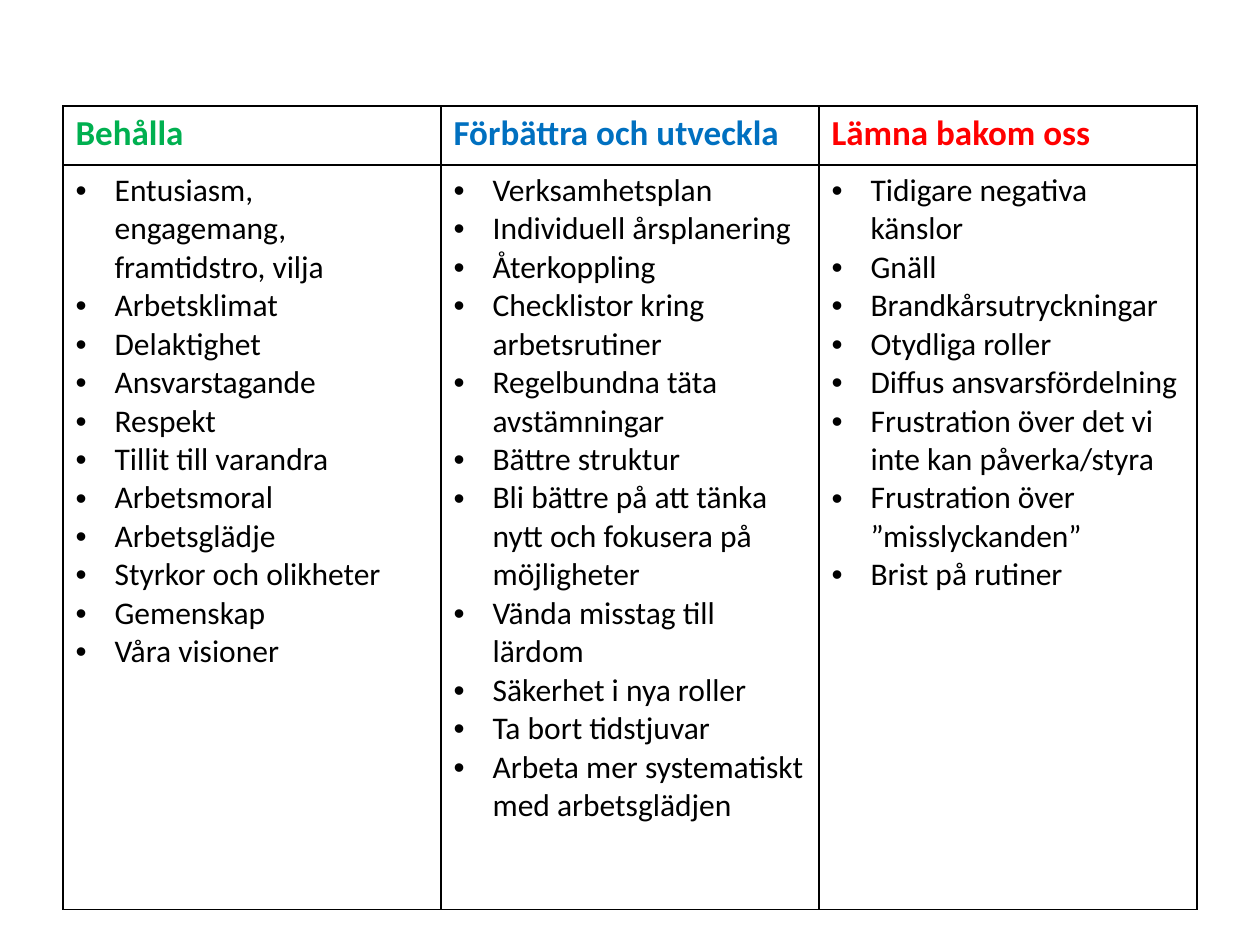
"""Build a three-column slide of what to keep, improve and leave behind."""
from lxml.etree import SubElement
from pptx import Presentation
from pptx.dml.color import RGBColor
from pptx.oxml.ns import qn
from pptx.util import Inches, Pt

COLORS = {
    "keep": "00B050",
    "improve": "0070C0",
    "leave": "FF0000",
    "text": "000000",
    "border": "000000",
}
HEADING_FORMAT = {"name": "Calibri", "size": Pt(20), "bold": True}
ITEM_FORMAT = {"name": "Calibri", "size": Pt(18), "bold": False}
COLUMN_WIDTH = 3
ROW_HEIGHTS = (0.47, 5.91)
BULLET_INDENT = 0.31

COLUMNS = [
    ("Behålla", "keep", [
        "Entusiasm, engagemang, framtidstro, vilja",
        "Arbetsklimat",
        "Delaktighet",
        "Ansvarstagande",
        "Respekt",
        "Tillit till varandra",
        "Arbetsmoral",
        "Arbetsglädje",
        "Styrkor och olikheter",
        "Gemenskap",
        "Våra visioner",
    ]),
    ("Förbättra och utveckla", "improve", [
        "Verksamhetsplan",
        "Individuell årsplanering",
        "Återkoppling",
        "Checklistor kring arbetsrutiner",
        "Regelbundna täta avstämningar",
        "Bättre struktur",
        "Bli bättre på att tänka nytt och fokusera på möjligheter",
        "Vända misstag till lärdom",
        "Säkerhet i nya roller",
        "Ta bort tidstjuvar",
        "Arbeta mer systematiskt med arbetsglädjen",
    ]),
    ("Lämna bakom oss", "leave", [
        "Tidigare negativa känslor",
        "Gnäll",
        "Brandkårsutryckningar",
        "Otydliga roller",
        "Diffus ansvarsfördelning",
        "Frustration över det vi inte kan påverka/styra",
        "Frustration över ”misslyckanden”",
        "Brist på rutiner",
    ]),
]


def add_text(paragraph, text, color, font_format):
    run = paragraph.add_run()
    run.text = text
    for name, value in font_format.items():
        setattr(run.font, name, value)
    run.font.color.rgb = RGBColor.from_string(COLORS[color])


def add_bullet(paragraph):
    indent = Inches(BULLET_INDENT)
    properties = paragraph._p.get_or_add_pPr()
    properties.set("marL", str(indent))
    properties.set("indent", str(-indent))
    SubElement(properties, qn("a:buFont"), typeface="Arial")
    SubElement(properties, qn("a:buChar"), char="•")


def style_cell(cell):
    properties = cell._tc.get_or_add_tcPr()
    for side in ("lnL", "lnR", "lnT", "lnB"):
        line = SubElement(properties, qn(f"a:{side}"), w=str(Pt(1)))
        fill = SubElement(line, qn("a:solidFill"))
        SubElement(fill, qn("a:srgbClr"), val=COLORS["border"])
    cell.fill.background()


def fill_list(cell, items):
    text_frame = cell.text_frame
    for index, item in enumerate(items):
        paragraph = text_frame.add_paragraph() if index else text_frame.paragraphs[0]
        add_bullet(paragraph)
        add_text(paragraph, item, "text", ITEM_FORMAT)


def add_comparison_table(slide):
    table = slide.shapes.add_table(
        len(ROW_HEIGHTS), len(COLUMNS), Inches(0.5), Inches(0.84),
        Inches(COLUMN_WIDTH * len(COLUMNS)), Inches(sum(ROW_HEIGHTS)),
    ).table
    table.first_row = False
    table.horz_banding = False
    for row, height in zip(table.rows, ROW_HEIGHTS):
        row.height = Inches(height)
    for index, (heading, color, items) in enumerate(COLUMNS):
        heading_cell, list_cell = table.cell(0, index), table.cell(1, index)
        add_text(heading_cell.text_frame.paragraphs[0], heading, color, HEADING_FORMAT)
        fill_list(list_cell, items)
    for cell in table.iter_cells():
        style_cell(cell)


def main():
    presentation = Presentation()
    presentation.slide_width = Inches(10)
    presentation.slide_height = Inches(7.5)
    slide = presentation.slides.add_slide(presentation.slide_layouts[6])
    add_comparison_table(slide)
    presentation.save("out.pptx")


if __name__ == "__main__":
    main()
